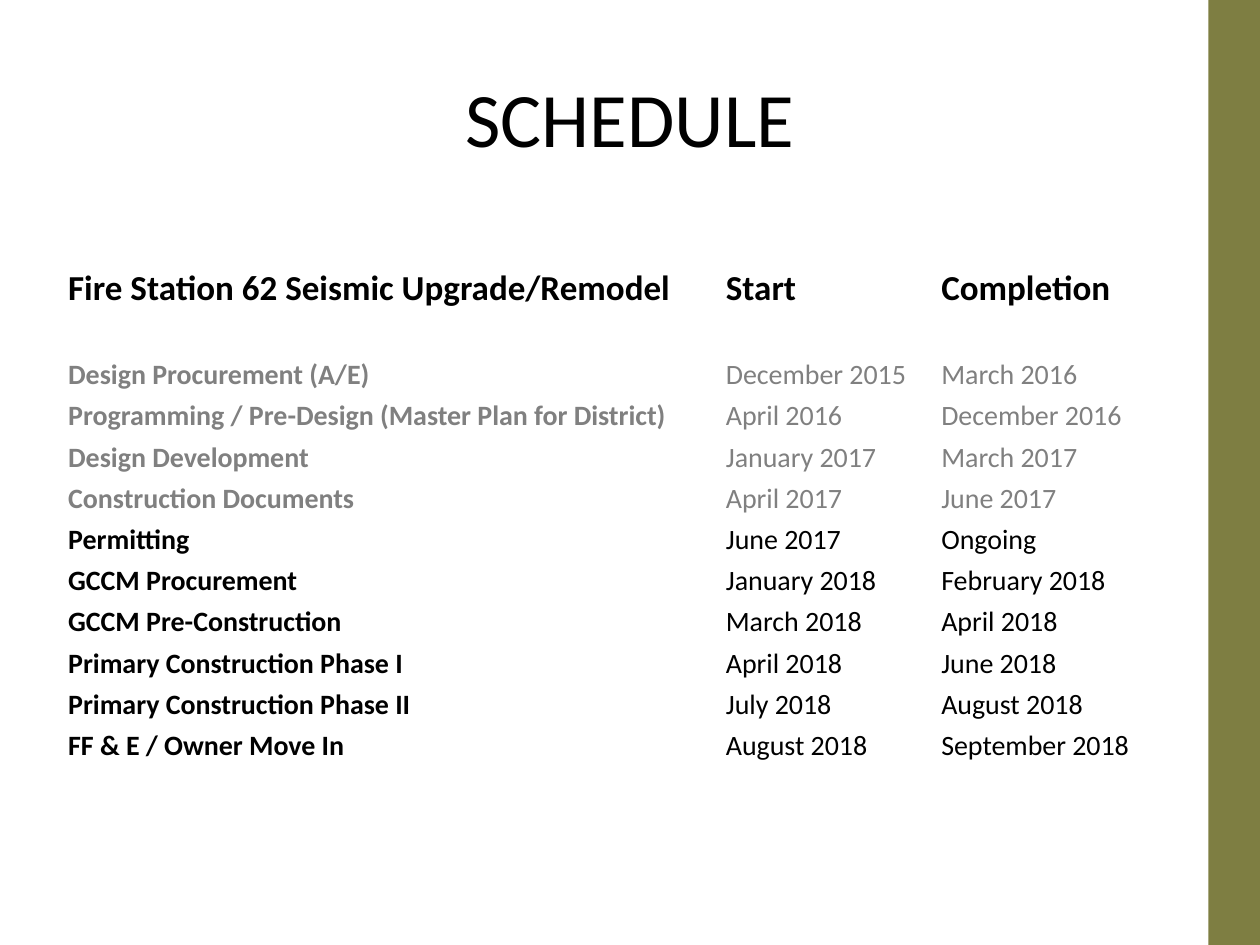
"""Build the fire station schedule slide."""

from typing import NamedTuple

from lxml.etree import SubElement
from pptx import Presentation
from pptx.dml.color import RGBColor
from pptx.enum.shapes import MSO_SHAPE
from pptx.enum.text import MSO_ANCHOR, PP_ALIGN
from pptx.oxml.ns import qn
from pptx.util import Inches, Pt

FONT = "Calibri"
BLACK = "000000"
GRAY = "808080"
WHITE = "FFFFFF"
OLIVE = "7E7E42"
HEADER_SIZE = 20
BODY_SIZE = 16
COLUMN_WIDTHS = (5.22, 1.71, 1.84)
HEADER_HEIGHT = 0.39
ROW_HEIGHT = 0.32


class Phase(NamedTuple):
    name: str
    start: str
    completion: str
    color: str = BLACK


HEADINGS = Phase("Fire Station 62 Seismic Upgrade/Remodel", "Start", "Completion")
SPACER = Phase("", "", "")
PHASES = (
    Phase("Design Procurement (A/E)", "December 2015", "March 2016", GRAY),
    Phase("Programming / Pre-Design (Master Plan for District)", "April 2016", "December 2016", GRAY),
    Phase("Design Development", "January 2017", "March 2017", GRAY),
    Phase("Construction Documents", "April 2017", "June 2017", GRAY),
    Phase("Permitting", "June 2017", "Ongoing"),
    Phase("GCCM Procurement", "January 2018", "February 2018"),
    Phase("GCCM Pre-Construction", "March 2018", "April 2018"),
    Phase("Primary Construction Phase I", "April 2018", "June 2018"),
    Phase("Primary Construction Phase II", "July 2018", "August 2018"),
    Phase("FF & E / Owner Move In", "August 2018", "September 2018"),
)


def rgb(color: str) -> RGBColor:
    return RGBColor.from_string(color)


def format_text(paragraph, size: int, color: str, bold: bool) -> None:
    for run in paragraph.runs:
        run.font.name = FONT
        run.font.size = Pt(size)
        run.font.bold = bold
        run.font.color.rgb = rgb(color)


def add_border(cell, side: str, width: float) -> None:
    properties = cell._tc.get_or_add_tcPr()
    line = SubElement(properties, qn(f"a:{side}"), w=str(Pt(width)))
    fill = SubElement(line, qn("a:solidFill"))
    SubElement(fill, qn("a:srgbClr"), val=WHITE)


def fill_cell(cell, text: str, size: int, color: str, bold: bool, bottom: float) -> None:
    cell.margin_left = cell.margin_right = Pt(3)
    cell.margin_top = cell.margin_bottom = Pt(2)
    for side in ("lnL", "lnR", "lnT"):
        add_border(cell, side, 1)
    add_border(cell, "lnB", bottom)
    cell.fill.background()
    paragraph = cell.text_frame.paragraphs[0]
    if text:
        paragraph.text = text
        format_text(paragraph, size, color, bold)
    else:
        SubElement(paragraph._p, qn("a:endParaRPr"), sz=str(size * 100))


def add_side_bar(slide) -> None:
    bar = slide.shapes.add_shape(
        MSO_SHAPE.RECTANGLE, Inches(9.59), Inches(-0.04), Inches(0.42), Inches(7.6)
    )
    bar.shadow.inherit = False
    bar.fill.solid()
    bar.fill.fore_color.rgb = rgb(OLIVE)
    bar.line.fill.background()


def set_title(slide, text: str) -> None:
    title = slide.shapes.title
    title.left, title.top = Inches(0.5), Inches(0.3)
    title.width, title.height = Inches(9), Inches(1.25)
    title.text_frame.text = text
    title.text_frame.vertical_anchor = MSO_ANCHOR.MIDDLE
    paragraph = title.text_frame.paragraphs[0]
    paragraph.alignment = PP_ALIGN.CENTER
    format_text(paragraph, 44, BLACK, False)


def add_schedule(slide) -> None:
    lines = (HEADINGS, SPACER, *PHASES)
    height = HEADER_HEIGHT + ROW_HEIGHT * (len(lines) - 1)
    table = slide.shapes.add_table(
        len(lines), len(COLUMN_WIDTHS), Inches(0.5), Inches(2.09),
        Inches(sum(COLUMN_WIDTHS)), Inches(height),
    ).table
    table.first_row = table.horz_banding = False
    for column, width in zip(table.columns, COLUMN_WIDTHS):
        column.width = Inches(width)
    for row, line in zip(table.rows, lines):
        is_header = line is HEADINGS
        row.height = Inches(HEADER_HEIGHT if is_header else ROW_HEIGHT)
        size = HEADER_SIZE if is_header else BODY_SIZE
        texts = (line.name, line.start, line.completion)
        for index, (cell, text) in enumerate(zip(row.cells, texts)):
            bold = is_header or index == 0
            fill_cell(cell, text, size, line.color, bold, 3 if is_header else 1)


def main() -> None:
    presentation = Presentation()
    presentation.slide_width = Inches(10)
    presentation.slide_height = Inches(7.5)
    slide = presentation.slides.add_slide(presentation.slide_layouts[5])
    add_side_bar(slide)
    set_title(slide, "SCHEDULE")
    add_schedule(slide)
    presentation.save("out.pptx")


if __name__ == "__main__":
    main()
